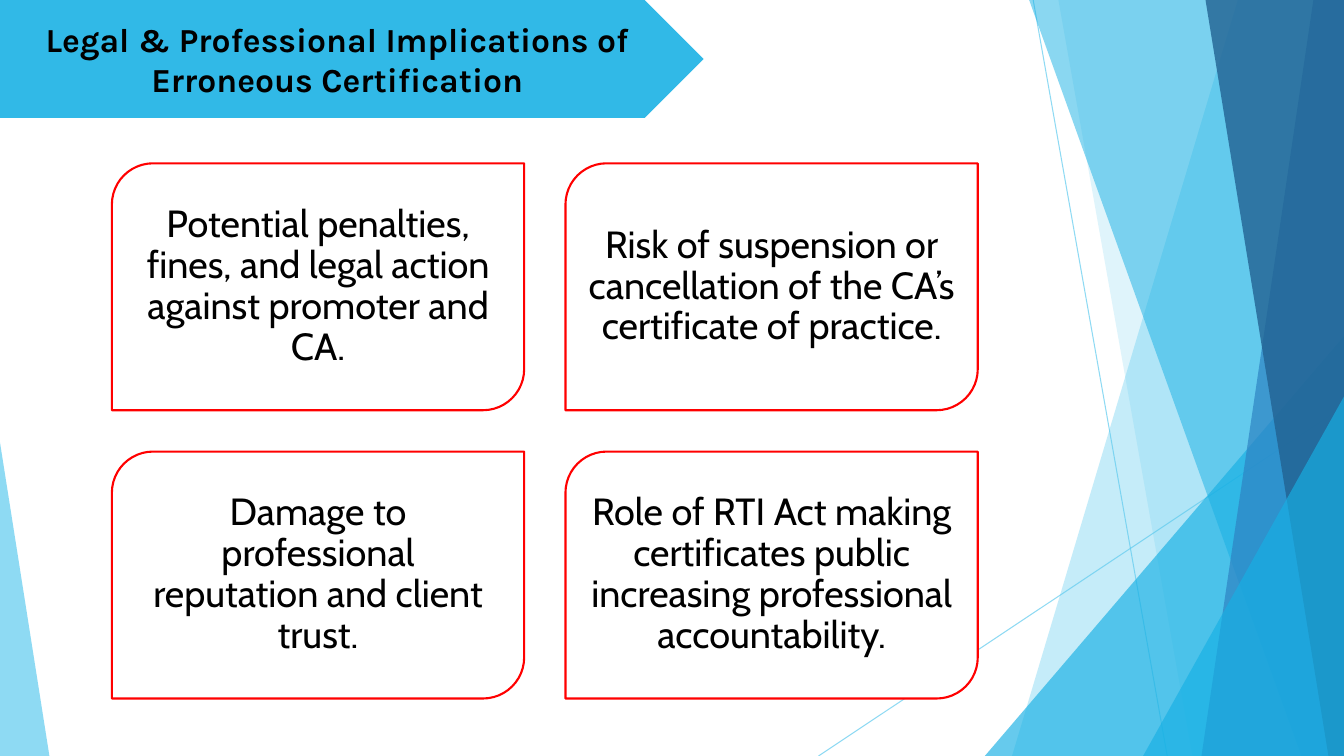
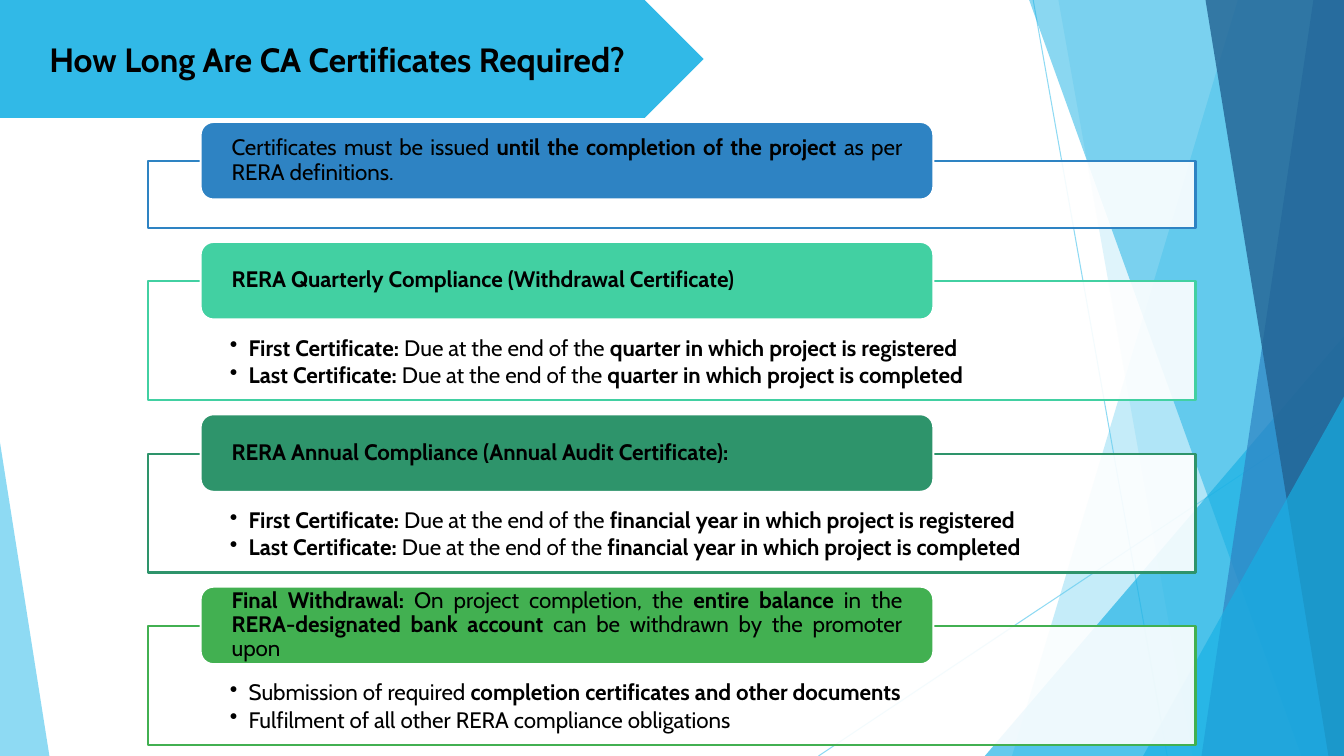
from lxml import etree
from pptx import Presentation
from pptx import util as u
from pptx.dml.color import RGBColor
from pptx.enum import shapes, text
from pptx.oxml import ns

# Square grid: 40 columns by 22.5 rows, three cells to the inch
COLUMNS, ROWS = 40, 22.5
KINDS = shapes.MSO_SHAPE
SKY, CYAN, BLUE, NAVY = "5FCBEF", "17B0E4", "2E83C3", "226292"
BAND, WHITE, BLACK, RED = "31B9E7", "FFFFFF", "000000", "FF0000"
MINT, PINE, GREEN = "42D0A2", "2E946B", "42B051"

RAYS = [((30.75, 0), (34.74, ROWS)), ((COLUMNS, 12.09), (24.36, ROWS))]
# Panels reach the right edge: left x at the top, left x at the bottom.
# Triangles: left, top, width, height, position of the tip.
BACKDROP = [
    ("panel", (36.84, 30.12), SKY, 36),
    ("panel", (31.5, 35.49), SKY, 20),
    ("triangle", (29.31, 10, 10.69, 12.5, 1), CYAN, 66),
    ("panel", (30.63, 38.73), CYAN, 50),
    ("panel", (39.09, 35.76), BLUE, 70),
    ("panel", (35.88, 39.54), NAVY, 80),
    ("triangle", (34.02, 11.8, 5.98, 10.7, 1), CYAN, 66),
    ("triangle", (0, 13.17, 1.47, 9.33, 0), SKY, 70),
]

RISKS = [
    "Potential penalties, fines, and legal action against promoter and CA.",
    "Risk of suspension or cancellation of the CA’s certificate of practice.",
    "Damage to professional reputation and client trust.",
    "Role of RTI Act making certificates public increasing professional accountability.",
]

# Colour, heading, bullets; asterisks enclose bold words
SECTIONS = [
    (BLUE, "Certificates must be issued *until the completion of the project* as per RERA definitions.", []),
    (MINT, "*RERA Quarterly Compliance (Withdrawal Certificate)*", [
        "*First Certificate:* Due at the end of the *quarter in which project is registered*",
        "*Last Certificate:* Due at the end of the *quarter in which project is completed*"]),
    (PINE, "*RERA Annual Compliance (Annual Audit Certificate):*", [
        "*First Certificate:* Due at the end of the *financial year in which project is registered*",
        "*Last Certificate:* Due at the end of the *financial year in which project is completed*"]),
    (GREEN, "*Final Withdrawal: *On project completion, the *entire balance* in the "
            "*RERA-designated bank account* can be withdrawn by the promoter upon", [
        "Submission of required *completion certificates and other documents*",
        "Fulfilment of all other RERA compliance obligations"]),
]


def cells(count):
    return u.Inches(count / 3)


def colour(value):
    return RGBColor.from_string(value)


def assign(target, values):
    for name, value in values.items():
        setattr(target, name, value)


def set_opacity(shape, route, percent):
    for tint in shape.element.xpath(f"./p:spPr/{route}/a:srgbClr"):
        etree.SubElement(tint, ns.qn("a:alpha"), val=str(percent * 1000))


class Deck:
    font = "Cabin"
    line_width = 1.5

    def __init__(self):
        self.deck = Presentation()
        assign(self.deck, {"slide_width": cells(COLUMNS), "slide_height": cells(ROWS)})
        self.layout = self.deck.slide_layouts[5]
        self.page = None

    def open_page(self, title, font=font):
        self.page = self.deck.slides.add_slide(self.layout)
        box = self.page.shapes.title
        assign(box, {"left": 0, "top": 0, "width": cells(20.07), "height": cells(3.51)})
        self.set_text(box, [f"*{title}*"], 24, font=font, spacing=1.0,
                      insets=(0.3, 0.15, 0.3, 0.15))

    def finish(self, shape, fill, opacity=100, line=None):
        shape.shadow.inherit = False
        shape.fill.solid()
        shape.fill.fore_color.rgb = colour(fill)
        if opacity < 100:
            set_opacity(shape, "a:solidFill", opacity)
        if line:
            shape.line.color.rgb = colour(line)
            shape.line.width = u.Pt(self.line_width)
        else:
            shape.line.fill.background()
        return shape

    def box(self, kind, area, fill, **look):
        shape = self.page.shapes.add_shape(kind, *map(cells, area))
        return self.finish(shape, fill, **look)

    def panel(self, edge, fill, opacity):
        top, bottom = edge
        builder = self.page.shapes.build_freeform(cells(top), 0)
        corners = [(COLUMNS, 0), (COLUMNS, ROWS), (bottom, ROWS)]
        builder.add_line_segments([(cells(x), cells(y)) for x, y in corners])
        self.finish(builder.convert_to_shape(), fill, opacity)

    def triangle(self, area, fill, opacity):
        *frame, tip = area
        shape = self.box(KINDS.ISOSCELES_TRIANGLE, frame, fill, opacity=opacity)
        shape.adjustments[0] = tip

    def ray(self, start, end):
        line = self.page.shapes.add_connector(
            shapes.MSO_CONNECTOR.STRAIGHT, *map(cells, start + end))
        line.line.color.rgb = colour(SKY)
        line.line.width = u.Pt(0.75)
        set_opacity(line, "a:ln/a:solidFill", 70)
        etree.SubElement(line.element.spPr, ns.qn("a:effectLst"))

    def share_backdrop(self):
        """Draw the band and the facets, then move them to the layout for all pages."""
        facets = {"panel": self.panel, "triangle": self.triangle}
        for start, end in RAYS:
            self.ray(start, end)
        for kind, geometry, fill, opacity in BACKDROP:
            facets[kind](geometry, fill, opacity)
        self.box(KINDS.PENTAGON, (0, 0, 20.94, 3.51), BAND)
        drawn = [shape for shape in self.page.shapes if not shape.is_placeholder]
        for index, shape in enumerate(drawn):
            shape.element.xpath(".//p:cNvPr")[0].set("id", str(100 + index))
            self.layout.shapes.element.insert(2 + index, shape.element)

    def set_text(self, shape, lines, size, font=font, align="CENTER", anchor="MIDDLE",
                 spacing=0.9, insets=(0.33,) * 4, gap=0, bullet=None):
        frame = shape.text_frame
        left, top, right, bottom = map(cells, insets)
        assign(frame, {"word_wrap": True, "auto_size": text.MSO_AUTO_SIZE.NONE,
                       "vertical_anchor": text.MSO_ANCHOR[anchor],
                       "margin_left": left, "margin_top": top,
                       "margin_right": right, "margin_bottom": bottom})
        for index, line in enumerate(lines):
            para = frame.add_paragraph() if index else frame.paragraphs[0]
            assign(para, {"alignment": text.PP_ALIGN[align], "line_spacing": spacing,
                          "space_before": u.Pt(0), "space_after": u.Pt(gap)})
            for position, words in enumerate(line.split("*")):
                if words:
                    span = para.add_run()
                    span.text = words
                    assign(span.font, {"name": font, "size": u.Pt(size),
                                       "bold": position % 2 == 1})
                    span.font.color.rgb = colour(BLACK)
        if bullet:
            for props in shape.element.iter(ns.qn("a:pPr")):
                indent = cells(0.56)
                props.set("marL", str(indent))
                props.set("indent", str(-indent))
                etree.SubElement(props, ns.qn("a:buChar"), char=bullet)

    def card(self, column, row, words):
        area = (3.33 + 13.5 * column, 4.86 + 8.58 * row, 12.27, 7.35)
        card = self.box(KINDS.ROUND_2_DIAG_RECTANGLE, area, WHITE, line=RED)
        self.set_text(card, [words], 27)

    def section(self, top, height, tint, heading, bullets):
        frame = self.box(KINDS.RECTANGLE, (4.41, top + 1.17, 31.17, height),
                         WHITE, opacity=90, line=tint)
        if bullets:
            self.set_text(frame, bullets, 16, align="JUSTIFY", anchor="TOP", gap=2.4,
                          insets=(2.43, 1.65, 2.43, 0.36), bullet="•")
        label = self.box(KINDS.ROUNDED_RECTANGLE, (5.97, top, 21.81, 2.31), tint, line=WHITE)
        self.set_text(label, [heading], 16, align="JUSTIFY", insets=(0.81, 0, 0.81, 0))


def main():
    deck = Deck()
    deck.open_page("Legal & Professional Implications of Erroneous Certification", font="Karla")
    deck.share_backdrop()
    for index, risk in enumerate(RISKS):
        row, column = divmod(index, 2)
        deck.card(column, row, risk)

    deck.open_page("How Long Are CA Certificates Required?")
    top = 3.63
    for tint, heading, bullets in SECTIONS:
        height = 3.54 if bullets else 1.98
        deck.section(top, height, tint, heading, bullets)
        top += height + 1.59

    deck.deck.save("out.pptx")


if __name__ == "__main__":
    main()
